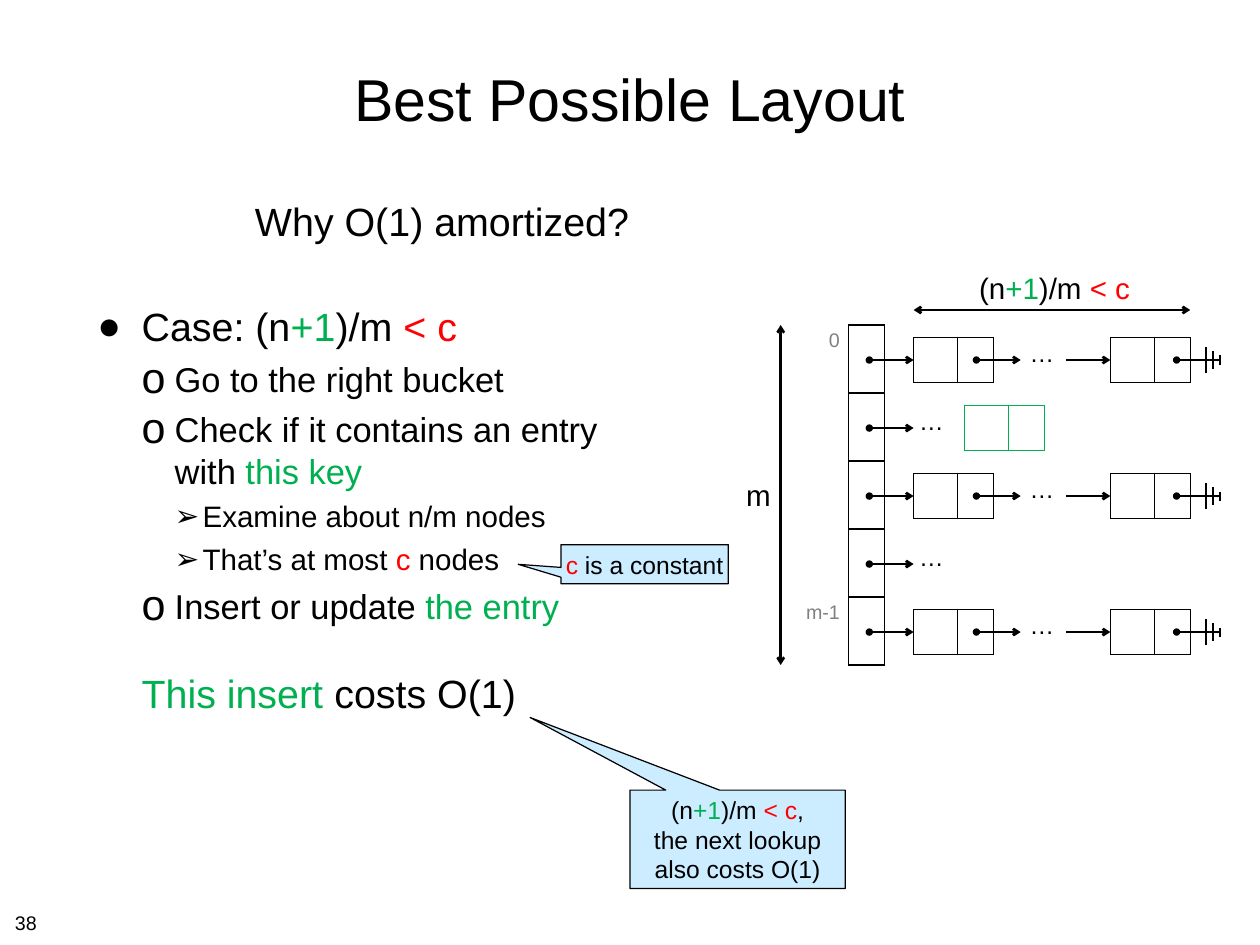
from lxml import etree
from pptx import Presentation
from pptx.dml.color import RGBColor
from pptx.enum import shapes, text
from pptx.oxml import ns
from pptx.util import Cm, Pt

BLACK = RGBColor(0x00, 0x00, 0x00)
GREEN = RGBColor(0x00, 0xB0, 0x50)
RED = RGBColor(0xFF, 0x00, 0x00)
GRAY = RGBColor(0x80, 0x80, 0x80)
PALE_BLUE = RGBColor(0xCC, 0xEC, 0xFF)
FONT = "Arial"

# A line of text is a list of (text, colour) parts; BREAK starts a new line.
BREAK = ("\n", BLACK)
LOAD = [("(n", BLACK), ("+1", GREEN), (")/m ", BLACK), ("< c", RED)]
TITLE = [("Best Possible Layout", BLACK)]

# kind: size, left margin (cm), first-line indent (cm), bullet, bullet size %
STYLES = {
    "question": (32, 4.52, 0, None, 100),
    "case": (32, 1.27, -1.27, "●", 100),
    "step": (28, 2.22, -0.95, "o", 125),
    "detail": (24, 3.02, -0.8, "➢", 100),
    "result": (32, 1.27, 0, None, 100),
}
# kind, space before (pt), parts
BODY = [
    ("question", 0, [("Why O(1) amortized?", BLACK)]),
    ("case", 47, [("Case: ", BLACK)] + LOAD),
    ("step", 7, [("Go to the right bucket", BLACK)]),
    ("step", 7, [("Check if it contains an entry", BLACK), BREAK,
                 ("with ", BLACK), ("this key", GREEN)]),
    ("detail", 6, [("Examine about n/m nodes", BLACK)]),
    ("detail", 6, [("That’s at most ", BLACK), ("c", RED), (" nodes", BLACK)]),
    ("step", 7, [("Insert or update ", BLACK), ("the entry", GREEN)]),
    ("result", 35, [("This insert ", GREEN), ("costs O(1)", BLACK)]),
]
# box (cm), pointer tip relative to the box, lines
CALLOUTS = [
    ((16.08, 15.62, 4.8, 1.12), (-0.755, 0.004),
     [[("c", RED), (" is a constant", BLACK)]]),
    ((18.06, 22.66, 6.17, 2.82), (-0.964, -1.239),
     [LOAD + [(",", BLACK)],
      [("the next lookup", BLACK), BREAK, ("also costs O(1)", BLACK)]]),
]

# Hash table, in cm
BUCKET_LABELS = ["0", "", "", "", "m-1"]
FULL_CHAINS = {0, 2, 4}
INSERT_BUCKET = 1
TABLE_LEFT, TABLE_TOP, ROW = 22.81, 9.32, 1.95
LABEL_W, BUCKET_W = 1.52, 1.02
NODE_COLS, NODE_H = (1.27, 1.02), 1.27
FIRST_NODE, LAST_NODE, NEW_NODE = 26.19, 31.83, 27.64
LINK = 1.27
GROUND_BARS = [(34.57, 0.38), (34.77, 0.25), (34.97, 0.13)]


def sub(parent, tag, **attrs):
    return etree.SubElement(parent, ns.qn(tag), **attrs)


def fill_paragraph(p, parts, size):
    for words, colour in parts:
        if words == "\n":
            p.add_line_break()
            continue
        r = p.add_run()
        r.text = words
        r.font.name, r.font.size = FONT, Pt(size)
        r.font.color.rgb = colour


def fill_frame(tf, lines, size, align, inset, anchor, wrap=False):
    tf.word_wrap = wrap
    tf.vertical_anchor = anchor
    tf.margin_left = tf.margin_right = tf.margin_top = tf.margin_bottom = Cm(inset)
    for i, parts in enumerate(lines):
        p = tf.add_paragraph() if i else tf.paragraphs[0]
        p.alignment = align
        fill_paragraph(p, parts, size)


def add_label(s, box, parts, size, align=text.PP_ALIGN.CENTER, inset=0.13,
              anchor=text.MSO_ANCHOR.TOP):
    tf = s.shapes.add_textbox(*map(Cm, box)).text_frame
    fill_frame(tf, [parts], size, align, inset, anchor)


def add_line(group, x1, y1, x2, y2, head=None, tail=None):
    c = group.shapes.add_connector(shapes.MSO_CONNECTOR.STRAIGHT,
                                   Cm(x1), Cm(y1), Cm(x2), Cm(y2))
    c.line.color.rgb = BLACK
    c.line.width = Pt(2)
    ln = c.line._get_or_add_ln()
    for tag, kind in (("a:headEnd", head), ("a:tailEnd", tail)):
        if kind:
            sub(ln, tag, type=kind)
    sub(c._element.spPr, "a:effectLst")


def set_borders(cell, colour, sides="LRTB"):
    tcPr = cell._tc.get_or_add_tcPr()
    for side in sides:
        ln = sub(tcPr, "a:ln" + side, w=str(Pt(1)))
        sub(sub(ln, "a:solidFill"), "a:srgbClr", val=str(colour))
    cell.fill.background()


def add_grid(s, left, top, cols, rows):
    """Add a table without header or banding and return it."""
    t = s.shapes.add_table(len(rows), len(cols), Cm(left), Cm(top),
                           Cm(sum(cols)), Cm(sum(rows))).table
    t.first_row = t.horz_banding = False
    for col, w in zip(t.columns, cols):
        col.width = Cm(w)
    for row, h in zip(t.rows, rows):
        row.height = Cm(h)
    return t


def add_node(s, left, middle, colour=BLACK):
    t = add_grid(s, left, middle - NODE_H / 2, NODE_COLS, [NODE_H])
    for cell in t.iter_cells():
        set_borders(cell, colour)


def add_dots(s, left, middle):
    add_label(s, (left, middle - 0.77, 1.22, 1.12), [("…", BLACK)], 20)


def add_ground(s, y):
    group = s.shapes.add_group_shape()
    add_line(group, 33.73, y, 33.73 + LINK, y, "oval")
    for x, half in GROUND_BARS:
        add_line(group, x, y - half, x, y + half)


def add_chain(s, y):
    add_node(s, FIRST_NODE, y)
    add_node(s, LAST_NODE, y)
    add_line(s, 27.99, y, 27.99 + LINK, y, "oval", "arrow")
    add_dots(s, 29.26, y)
    add_line(s, LAST_NODE - LINK, y, LAST_NODE, y, tail="arrow")
    add_ground(s, y)


def add_hash_table(s):
    t = add_grid(s, TABLE_LEFT, TABLE_TOP, (LABEL_W, BUCKET_W),
                 [ROW] * len(BUCKET_LABELS))
    for i, label in enumerate(BUCKET_LABELS):
        name, bucket = t.cell(i, 0), t.cell(i, 1)
        set_borders(name, BLACK, "R")
        set_borders(bucket, BLACK)
        if label:
            p = name.text_frame.paragraphs[0]
            p.alignment = text.PP_ALIGN.RIGHT
            fill_paragraph(p, [(label, GRAY)], 16)
        y = TABLE_TOP + ROW * (i + 0.5) + 0.03
        add_line(s, FIRST_NODE - LINK, y, FIRST_NODE, y, "oval", "arrow")
        if i in FULL_CHAINS:
            add_chain(s, y)
        else:
            add_dots(s, 26.09, y)
        if i == INSERT_BUCKET:
            add_node(s, NEW_NODE, y, GREEN)

    bottom = TABLE_TOP + ROW * len(BUCKET_LABELS)
    add_line(s, 22.38, TABLE_TOP, 22.38, bottom, "arrow", "arrow")
    add_label(s, (21.13, 13.56, 1.22, 1.27), [("m", BLACK)], 24)
    add_line(s, LAST_NODE + sum(NODE_COLS), 8.89, FIRST_NODE, 8.89, "arrow", "arrow")
    add_label(s, (27.79, 7.62, 4.88, 1.27), LOAD, 24)


def add_body(s):
    tf = s.shapes.add_textbox(Cm(2.64), Cm(5.51), Cm(30.84), Cm(19.15)).text_frame
    fill_frame(tf, [[] for _ in BODY], 28, text.PP_ALIGN.LEFT, 0.15,
               text.MSO_ANCHOR.TOP, wrap=True)
    for p, (kind, before, parts) in zip(tf.paragraphs, BODY):
        size, margin, indent, bullet, percent = STYLES[kind]
        p.space_before = Pt(before)
        pPr = p._p.get_or_add_pPr()
        pPr.set("marL", str(Cm(margin)))
        pPr.set("indent", str(Cm(indent)))
        if bullet:
            sub(pPr, "a:buSzPct", val=str(percent * 1000))
            sub(pPr, "a:buFont", typeface=FONT)
            sub(pPr, "a:buChar", char=bullet)
        fill_paragraph(p, parts, size)


def add_callout(s, box, tip, lines):
    sp = s.shapes.add_shape(shapes.MSO_SHAPE.RECTANGULAR_CALLOUT, *map(Cm, box))
    sp.adjustments[0], sp.adjustments[1] = tip
    sp.shadow.inherit = False
    sp.fill.solid()
    sp.fill.fore_color.rgb = PALE_BLUE
    sp.line.color.rgb = BLACK
    sp.line.width = Pt(1)
    fill_frame(sp.text_frame, lines, 20, text.PP_ALIGN.CENTER, 0.13,
               text.MSO_ANCHOR.MIDDLE)


def main():
    prs = Presentation()
    prs.slide_width, prs.slide_height = Cm(36.12), Cm(27.1)
    s = prs.slides.add_slide(prs.slide_layouts[6])
    add_label(s, (2.64, 0.71, 30.84, 4.17), TITLE, 48, anchor=text.MSO_ANCHOR.MIDDLE)
    add_body(s)
    add_hash_table(s)
    for callout in CALLOUTS:
        add_callout(s, *callout)
    add_label(s, (0.28, 25.98, 0.94, 0.89), [("38", BLACK)], 16,
              align=text.PP_ALIGN.LEFT, inset=0.15)
    prs.save("out.pptx")


if __name__ == "__main__":
    main()
